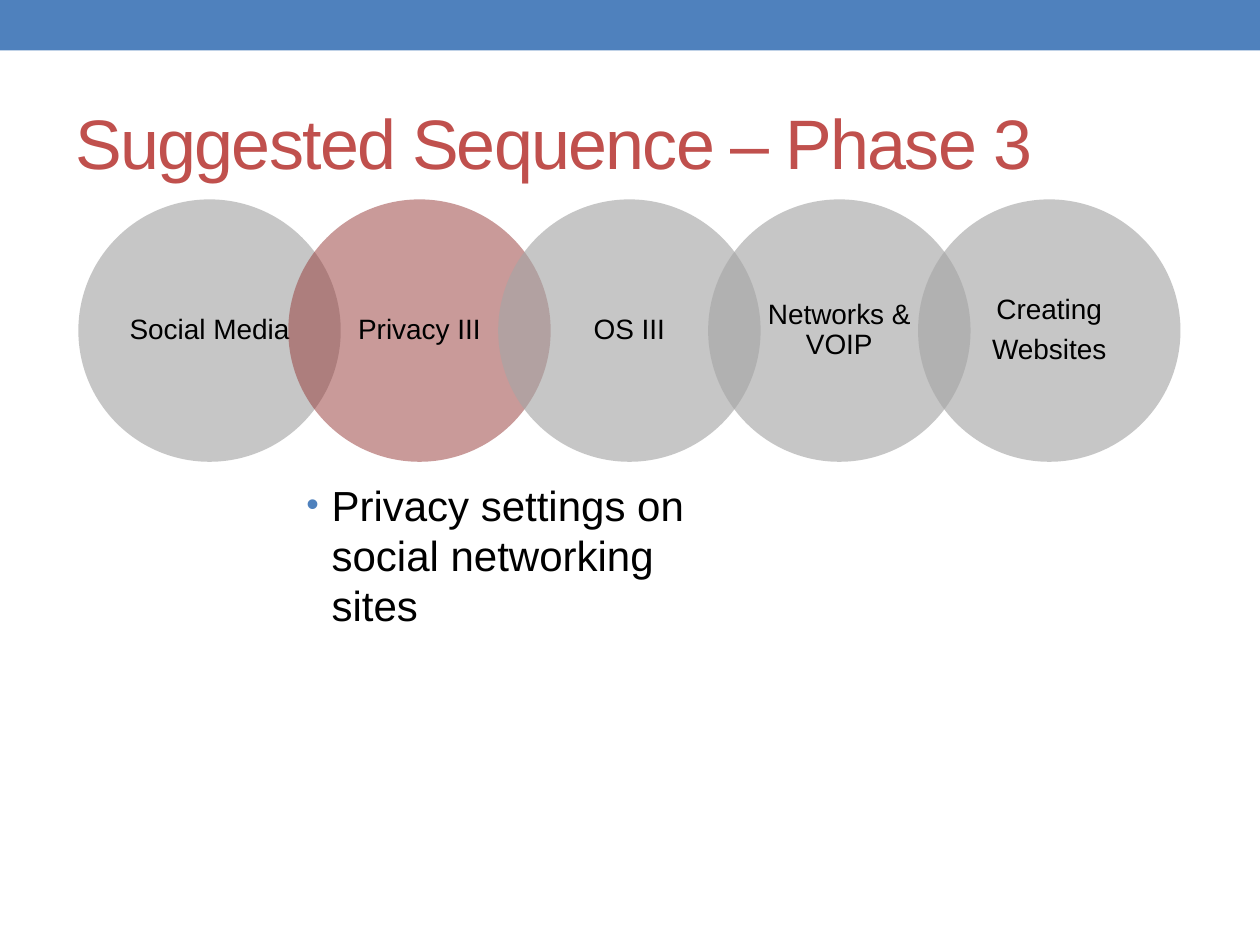
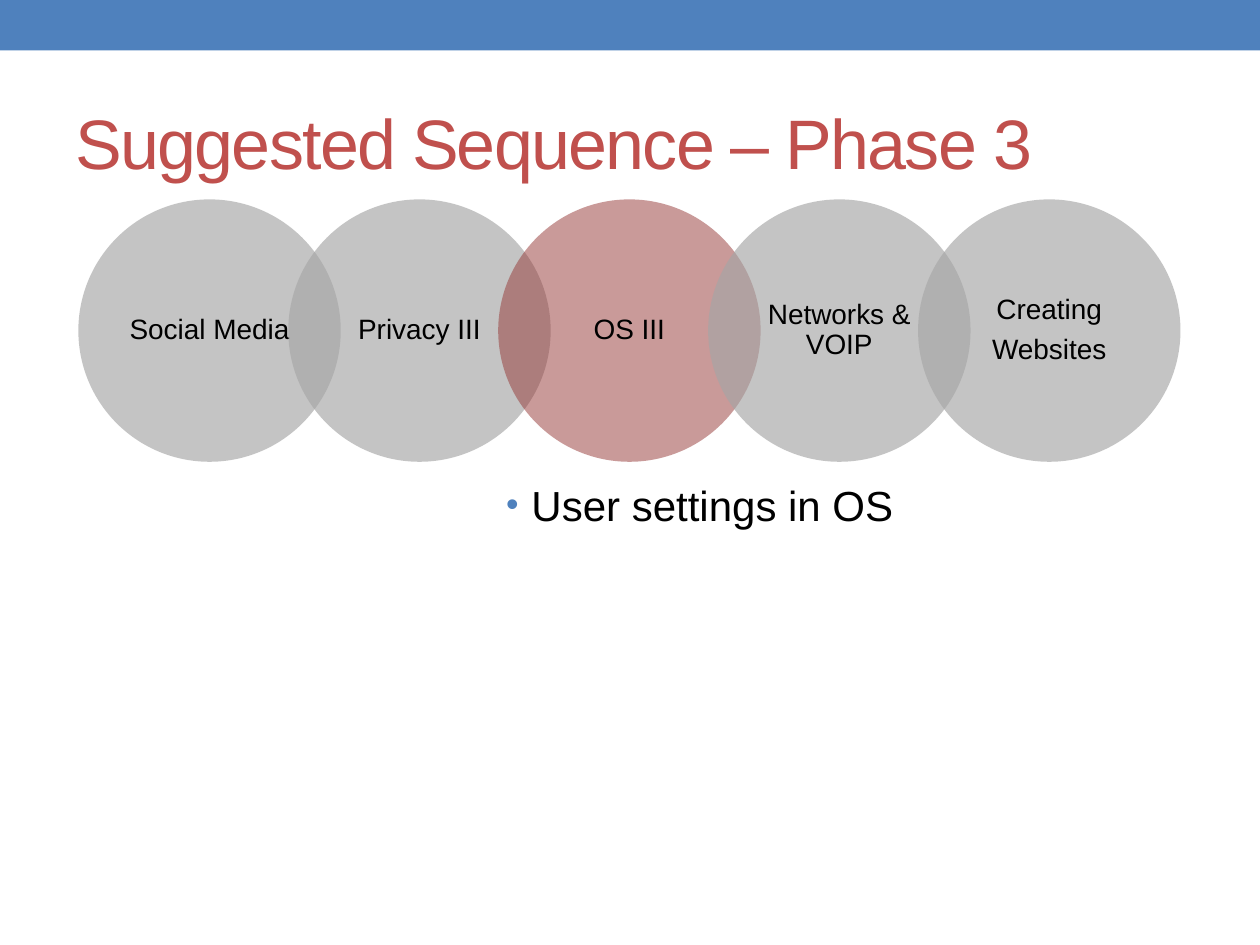
from lxml.etree import SubElement
from pptx import Presentation
from pptx.dml.color import RGBColor
from pptx.enum.shapes import MSO_SHAPE
from pptx.enum.text import MSO_ANCHOR, MSO_AUTO_SIZE, PP_ALIGN
from pptx.oxml.ns import qn
from pptx.util import Cm, Pt

# Shared look
BLUE = RGBColor(0x4F, 0x81, 0xBD)
RED = RGBColor(0xC0, 0x50, 0x4D)
DARK_RED = RGBColor(0x95, 0x37, 0x35)
GRAY = RGBColor(0xA6, 0xA6, 0xA6)
BLACK = RGBColor(0, 0, 0)

TITLE_FONT = {"name": "Arial", "size": Pt(40)}
CIRCLE_FONT = {"name": "Arial", "size": Pt(16)}
BODY_FONT = {"name": "Arial", "size": Pt(24)}
CIRCLE_PARA = {"alignment": PP_ALIGN.CENTER, "line_spacing": 0.9,
               "space_before": Pt(0), "space_after": Pt(5.6)}

TITLE = "Suggested Sequence – Phase 3"
TITLE_BOX = (Cm(1.27), Cm(1.48), Cm(22.86), Cm(2.74))
CHAIN_BOX = (Cm(1.58), Cm(4.02), Cm(5.29))  # left, top, diameter
STEP_RATIO = 0.8  # each circle overlaps the one before by a fifth

# Topic lines and side inset of each circle
TOPICS = [
    (["Social Media"], Cm(0)),
    (["Privacy III"], Cm(0)),
    (["OS III"], Cm(0)),
    (["Networks & VOIP"], Cm(0.28)),
    (["Creating", "Websites"], Cm(0.28)),
]

# Current topic, opacity of the other circles, bullet and its box
PAGES = [
    (1, 64, "Privacy settings on social networking sites",
     (Cm(5.92), Cm(9.53), Cm(9.32), Cm(5.71))),
    (2, 66, "User settings in OS",
     (Cm(9.95), Cm(9.53), Cm(12.28), Cm(5.71))),
]


def apply(target, values):
    for name, value in values.items():
        setattr(target, name, value)


def place(item, box):
    apply(item, dict(zip(("left", "top", "width", "height"), box)))


def write(para, text, font, color):
    span = para.add_run()
    span.text = text
    apply(span.font, font)
    span.font.color.rgb = color
    return span


def paint(shape, color):
    shape.shadow.inherit = False
    shape.fill.solid()
    shape.fill.fore_color.rgb = color
    shape.line.fill.background()


def set_opacity(shape, percent):
    color = shape.element.spPr.find(qn("a:solidFill"))[0]
    SubElement(color, qn("a:alpha"), val=str(percent * 1000))


def add_master_band(deck, page):
    """Draw the top band and move it to the master, behind everything."""
    band = page.shapes.add_shape(MSO_SHAPE.RECTANGLE, 0, 0, deck.slide_width, Cm(1.02))
    paint(band, BLUE)
    band.element.find(".//" + qn("p:cNvPr")).set("id", "20")
    deck.slide_master.shapes.element.insert(2, band.element)


def fill_title(title, box):
    place(title, box)
    frame = title.text_frame
    apply(frame, {"vertical_anchor": MSO_ANCHOR.MIDDLE, "word_wrap": True,
                  "auto_size": MSO_AUTO_SIZE.NONE})
    para = frame.paragraphs[0]
    para.alignment = PP_ALIGN.LEFT
    span = write(para, TITLE, TITLE_FONT, RED)
    span.font._element.set("spc", "-100") if hasattr(span.font, "_element") else \
        span._r.get_or_add_rPr().set("spc", "-100")


def add_circle(group, box, lines, side_inset, color, opacity):
    circle = group.shapes.add_shape(MSO_SHAPE.OVAL, *box)
    paint(circle, color)
    set_opacity(circle, opacity)
    frame = circle.text_frame
    apply(frame, {"margin_left": side_inset, "margin_right": side_inset,
                  "margin_top": Cm(0.05), "margin_bottom": Cm(0.05),
                  "vertical_anchor": MSO_ANCHOR.MIDDLE, "word_wrap": True})
    for number, line in enumerate(lines):
        para = frame.add_paragraph() if number else frame.paragraphs[0]
        apply(para, CIRCLE_PARA)
        write(para, line, CIRCLE_FONT, BLACK)


def add_topic_chain(page, box, current, opacity):
    left, top, diameter = box
    group = page.shapes.add_group_shape()
    for number, (lines, side_inset) in enumerate(TOPICS):
        circle_left = left + int(number * diameter * STEP_RATIO)
        look = (DARK_RED, 50) if number == current else (GRAY, opacity)
        add_circle(group, (circle_left, top, diameter, diameter),
                   lines, side_inset, *look)


def fill_body(body, box, text):
    place(body, box)
    frame = body.text_frame
    apply(frame, {"word_wrap": True, "auto_size": MSO_AUTO_SIZE.NONE})
    para = frame.paragraphs[0]
    para.space_before = Pt(4.8)
    write(para, text, BODY_FONT, BLACK)
    # Blue bullet with a hanging indent
    settings = para._p.get_or_add_pPr()
    settings.set("marL", str(Cm(0.51)))
    settings.set("indent", str(-Cm(0.51)))
    bullet_color = SubElement(settings, qn("a:buClr"))
    SubElement(bullet_color, qn("a:srgbClr"), val=str(BLUE))
    SubElement(settings, qn("a:buSzPct"), val="85000")
    SubElement(settings, qn("a:buFont"), typeface="Arial")
    SubElement(settings, qn("a:buChar"), char="•")


def add_phase_page(deck, current, opacity, bullet, body_box):
    page = deck.slides.add_slide(deck.slide_layouts[1])
    fill_title(page.shapes.title, TITLE_BOX)
    add_topic_chain(page, CHAIN_BOX, current, opacity)
    fill_body(page.placeholders[1], body_box, bullet)
    return page


def main():
    deck = Presentation()
    deck.slide_width, deck.slide_height = Cm(25.4), Cm(19.05)
    pages = [add_phase_page(deck, *details) for details in PAGES]
    add_master_band(deck, pages[0])
    deck.save("out.pptx")


if __name__ == "__main__":
    main()
